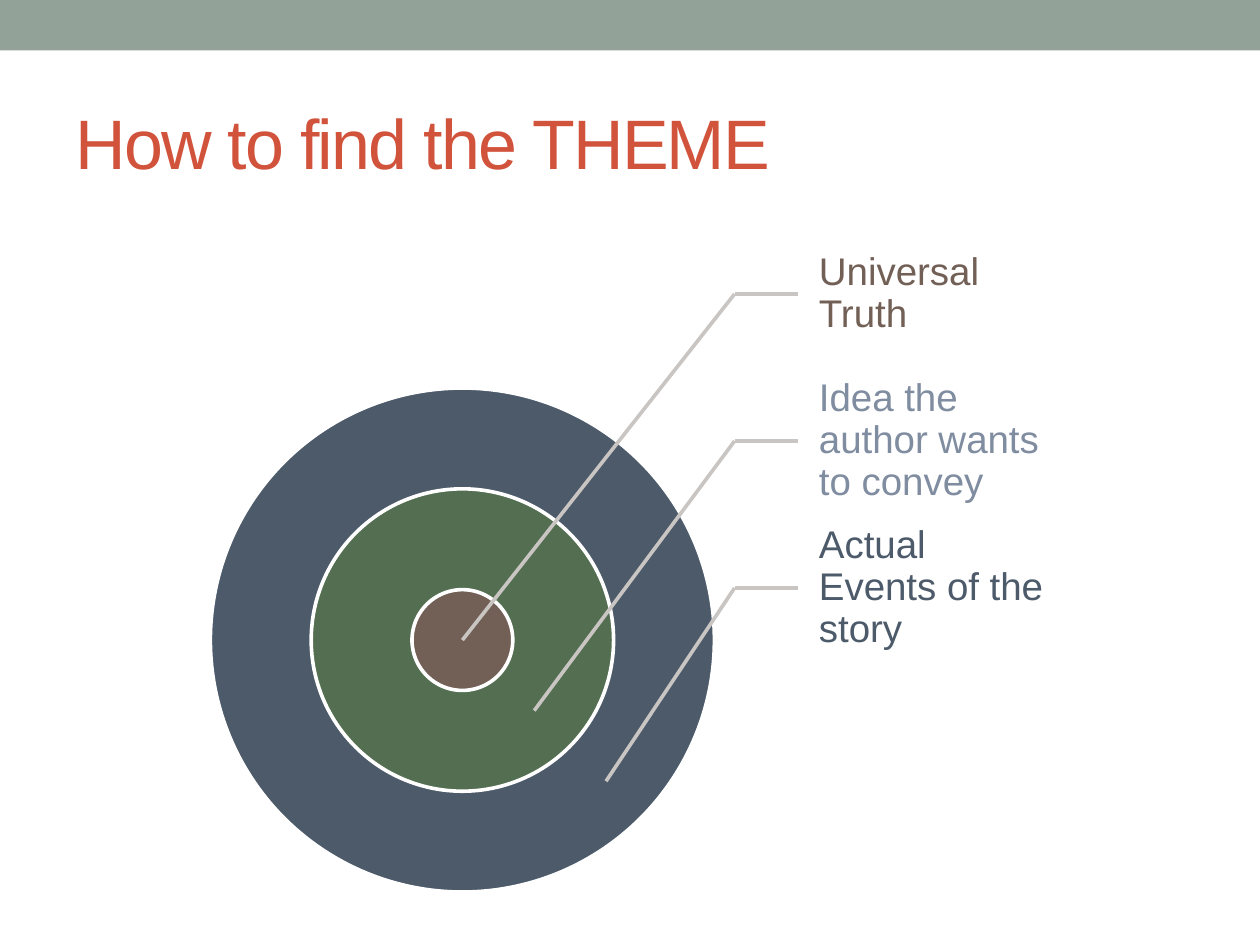
from lxml import etree
from pptx import Presentation
from pptx.dml.color import RGBColor
from pptx.enum import shapes, text
from pptx.oxml import ns
from pptx.util import Inches, Pt

WIDTH, HEIGHT = 10, 7.5
FONT = "Arial"
LINE_WIDTH = 2.08
COLORS = {
    "band": "93A299",
    "title": "D2533C",
    "outline": "FFFFFF",
    "leader": "C9C5C3",
    "events": "4C5A6A",
    "idea": "536E51",
    "idea_label": "808DA0",
    "truth": "726056",
}
CENTER_X, CENTER_Y = 3.67, 5.08
RINGS = [(4, "events"), (2.4, "idea"), (0.8, "truth")]
LABELS = [
    ("Universal Truth", "truth"),
    ("Idea the author wants to convey", "idea_label"),
    ("Actual Events of the story", "events"),
]
LABEL_LEFT, LABEL_TOP = 6.33, 1.75
LABEL_WIDTH, LABEL_HEIGHT = 2, 3.5 / 3
ELBOW_X = 5.83
TARGET_STEP_X, TARGET_STEP_Y = 0.57, 0.56


def color(name):
    return RGBColor.from_string(COLORS[name])


def add_filled(page, kind, left, top, width, height, fill, outline=None):
    shape = page.shapes.add_shape(
        kind, Inches(left), Inches(top), Inches(width), Inches(height))
    shape.shadow.inherit = False
    shape.fill.solid()
    shape.fill.fore_color.rgb = color(fill)
    if outline:
        shape.line.color.rgb = color(outline)
        shape.line.width = Pt(LINE_WIDTH)
    else:
        shape.line.fill.background()


def add_text(page, words, left, top, width, height, size, ink, insets):
    box = page.shapes.add_textbox(
        Inches(left), Inches(top), Inches(width), Inches(height))
    frame = box.text_frame
    frame.word_wrap = True
    frame.vertical_anchor = text.MSO_ANCHOR.MIDDLE
    (frame.margin_left, frame.margin_top,
     frame.margin_right, frame.margin_bottom) = map(Inches, insets)
    para = frame.paragraphs[0]
    span = para.add_run()
    span.text = words
    span.font.name = FONT
    span.font.size = Pt(size)
    span.font.color.rgb = color(ink)
    return para, span


def add_line(page, start, end):
    line = page.shapes.add_connector(
        shapes.MSO_CONNECTOR.STRAIGHT, *map(Inches, (*start, *end)))
    line.line.color.rgb = color("leader")
    line.line.width = Pt(LINE_WIDTH)
    etree.SubElement(line.element.spPr, ns.qn("a:effectLst"))


def add_title(page):
    para, span = add_text(page, "How to find the THEME", 0.5, 0.58, 9, 1.08,
                          40, "title", (0.1, 0.05, 0.1, 0.05))
    span.font._element.set("spc", "-100")


def add_ring(page, diameter, fill):
    add_filled(page, shapes.MSO_SHAPE.OVAL, CENTER_X - diameter / 2,
               CENTER_Y - diameter / 2, diameter, diameter, fill, "outline")


def add_label(page, row, words, ink):
    top = LABEL_TOP + row * LABEL_HEIGHT
    para, span = add_text(page, words, LABEL_LEFT, top, LABEL_WIDTH,
                          LABEL_HEIGHT, 22, ink, (0.17, 0.03, 0.03, 0.03))
    para.line_spacing = 0.9
    para.space_after = Pt(7.7)
    middle = top + LABEL_HEIGHT / 2
    elbow = (ELBOW_X, middle)
    target = (CENTER_X + row * TARGET_STEP_X, CENTER_Y + row * TARGET_STEP_Y)
    add_line(page, elbow, (LABEL_LEFT, middle))
    add_line(page, elbow, target)


def main():
    deck = Presentation()
    deck.slide_width, deck.slide_height = Inches(WIDTH), Inches(HEIGHT)
    page = deck.slides.add_slide(deck.slide_layouts[6])
    add_filled(page, shapes.MSO_SHAPE.RECTANGLE, 0, 0, WIDTH, 0.4, "band")
    add_title(page)
    for diameter, fill in RINGS:
        add_ring(page, diameter, fill)
    for row, (words, ink) in enumerate(LABELS):
        add_label(page, row, words, ink)
    deck.save("out.pptx")


if __name__ == "__main__":
    main()
